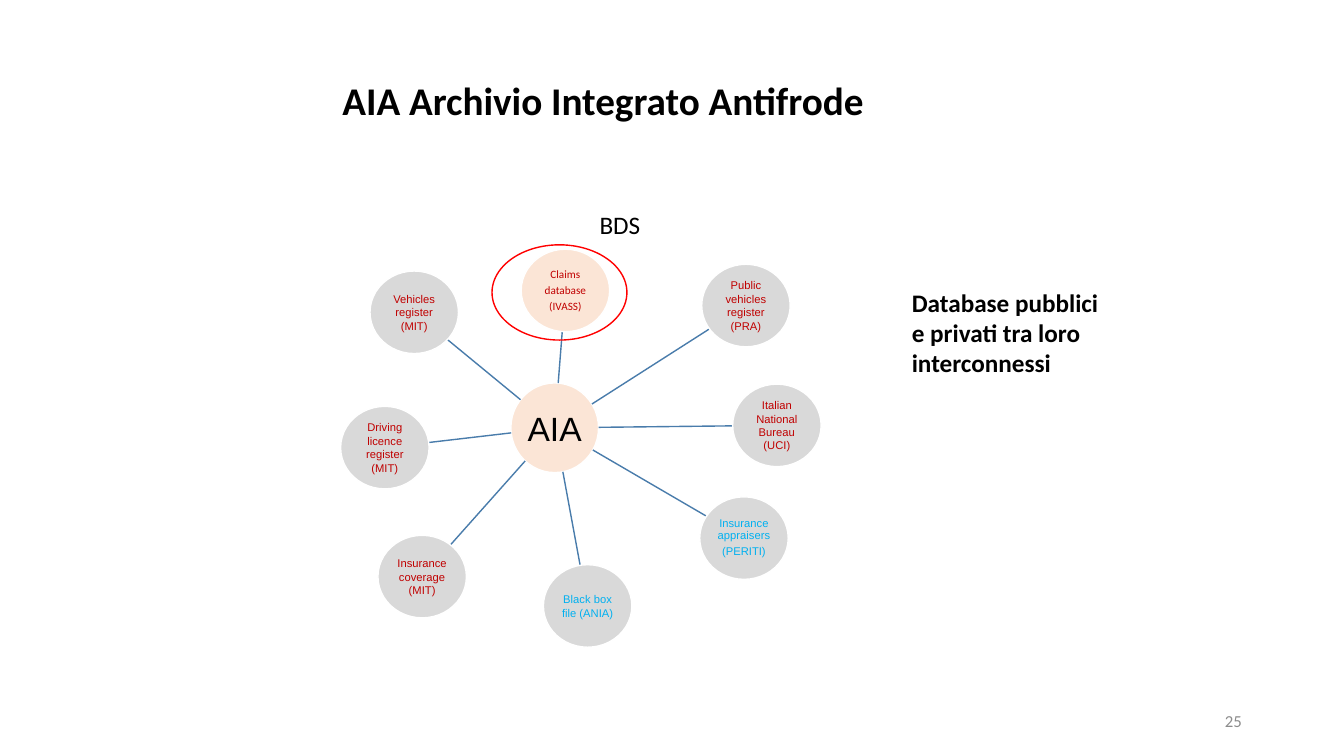
from dataclasses import dataclass
from math import hypot

from lxml import etree
from pptx import Presentation
from pptx.dml.color import RGBColor
from pptx.enum.shapes import MSO_CONNECTOR, MSO_SHAPE
from pptx.enum.text import MSO_ANCHOR, PP_ALIGN
from pptx.oxml.ns import qn
from pptx.util import Cm, Pt

OVAL = MSO_SHAPE.OVAL
LINE = MSO_CONNECTOR.STRAIGHT
TOP, MID = MSO_ANCHOR.TOP, MSO_ANCHOR.MIDDLE
LEFT, CENTER, RIGHT = PP_ALIGN.LEFT, PP_ALIGN.CENTER, PP_ALIGN.RIGHT


@dataclass(frozen=True)
class Theme:
    black: str = "000000"
    white: str = "FFFFFF"
    peach: str = "FBE5D6"
    grey: str = "D9D9D9"
    red: str = "C00000"
    cyan: str = "00B0F0"
    spoke: str = "497CAB"
    ring: str = "FF0000"
    faint: str = "8C8C8C"
    sans: str = "Arial"
    body: str = "Calibri"
    title: int = 28
    hub: int = 24
    note: int = 18
    page: int = 12
    node: int = 8


T = Theme()


@dataclass(frozen=True)
class Node:
    """An oval, placed by its centre in cm."""
    x: float
    y: float
    lines: tuple[str, ...]
    ink: str = T.red
    fill: str = T.grey
    font: str = T.sans
    size: int = T.node
    w: float = 2.23
    h: float = 2.08
    pad: float = 0.03
    loose: bool = False


@dataclass(frozen=True)
class Label:
    """A text box, in cm."""
    x: float
    y: float
    w: float
    h: float
    text: str
    size: int
    ink: str = T.black
    bold: bool = False
    align: int = LEFT
    anchor: int = TOP


HUB = Node(13.98, 10.78, ("AIA",), T.black, T.peach, size=T.hub,
           w=2.21, h=2.26, pad=0.05)

NODES = (
    Node(10.64, 14.53, ("Insurance coverage", "(MIT)")),
    Node(18.8, 7.7, ("Public vehicles", "register", "(PRA)")),
    Node(19.58, 10.72, ("Italian National Bureau", "(UCI)")),
    Node(18.75, 13.56, ("Insurance appraisers", "(PERITI)"), T.cyan, loose=True),
    Node(14.81, 15.27, ("Black box file (ANIA)",), T.cyan),
    Node(9.7, 11.28, ("Driving licence register (MIT)",)),
    Node(10.44, 7.87, ("Vehicles register", "(MIT)")),
    Node(14.25, 7.32, ("Claims", "database", "(IVASS)"), fill=T.peach,
         font=T.body, loose=True),
)

LABELS = (
    Label(8.38, 1.8, 14.35, 1.45, "AIA Archivio Integrato Antifrode", T.title, bold=True),
    Label(22.73, 7.11, 5.41, 2.57,
          "Database pubblici e privati tra loro interconnessi", T.note, bold=True),
    Label(23.93, 17.65, 7.62, 1.02, "25", T.page, T.faint, align=RIGHT, anchor=MID),
    Label(14.86, 5.16, 2.49, 1.07, "BDS", T.note),
)


def apply(item, **values) -> None:
    for name, value in values.items():
        setattr(item, name, value)


def write(para, text: str, font: str, size: int, ink: str, bold: bool = False) -> None:
    run = para.add_run()
    run.text = text
    apply(run.font, name=font, size=Pt(size), bold=bold)
    run.font.color.rgb = RGBColor.from_string(ink)


def stroke(shape, ink: str) -> None:
    shape.line.color.rgb = RGBColor.from_string(ink)
    shape.line.width = Pt(1)


def draw_oval(slide, x: float, y: float, w: float, h: float, ink: str):
    oval = slide.shapes.add_shape(OVAL, Cm(x - w / 2), Cm(y - h / 2), Cm(w), Cm(h))
    oval.shadow.inherit = False
    stroke(oval, ink)
    return oval


def draw_node(slide, node: Node) -> None:
    oval = draw_oval(slide, node.x, node.y, node.w, node.h, T.white)
    oval.fill.solid()
    oval.fill.fore_color.rgb = RGBColor.from_string(node.fill)
    frame = oval.text_frame
    pad = Cm(node.pad)
    apply(frame, word_wrap=True, vertical_anchor=MID, margin_left=pad,
          margin_right=pad, margin_top=pad, margin_bottom=pad)
    for i, text in enumerate(node.lines):
        para = frame.add_paragraph() if i else frame.paragraphs[0]
        para.alignment = CENTER
        if node.loose:
            apply(para, line_spacing=0.9, space_after=Pt(2.8))
        write(para, text, node.font, node.size, node.ink)


def edge(node: Node, goal: Node) -> tuple[float, float]:
    """Point on the rim of node that faces the centre of goal."""
    dx, dy = goal.x - node.x, goal.y - node.y
    part = 1 / hypot(dx / (node.w / 2), dy / (node.h / 2))
    return node.x + dx * part, node.y + dy * part


def draw_spoke(slide, node: Node) -> None:
    ends = (*edge(HUB, node), *edge(node, HUB))
    spoke = slide.shapes.add_connector(LINE, *map(Cm, ends))
    stroke(spoke, T.spoke)
    etree.SubElement(spoke._element.spPr, qn("a:effectLst"))


def draw_label(slide, label: Label) -> None:
    box = slide.shapes.add_textbox(*map(Cm, (label.x, label.y, label.w, label.h)))
    frame = box.text_frame
    apply(frame, word_wrap=True, vertical_anchor=label.anchor)
    para = frame.paragraphs[0]
    para.alignment = label.align
    write(para, label.text, T.body, label.size, label.ink, label.bold)


def main() -> None:
    deck = Presentation()
    apply(deck, slide_width=Cm(33.87), slide_height=Cm(19.05))
    slide = deck.slides.add_slide(deck.slide_layouts[6])

    # Hub with its ring of databases
    draw_node(slide, HUB)
    for node in NODES:
        draw_spoke(slide, node)
        draw_node(slide, node)

    # Red ring around the claims database
    ring = draw_oval(slide, 14.1, 7.37, 3.4, 2.4, T.ring)
    ring.fill.background()

    # Title, notes and page number
    for label in LABELS:
        draw_label(slide, label)

    deck.save("out.pptx")


if __name__ == "__main__":
    main()
